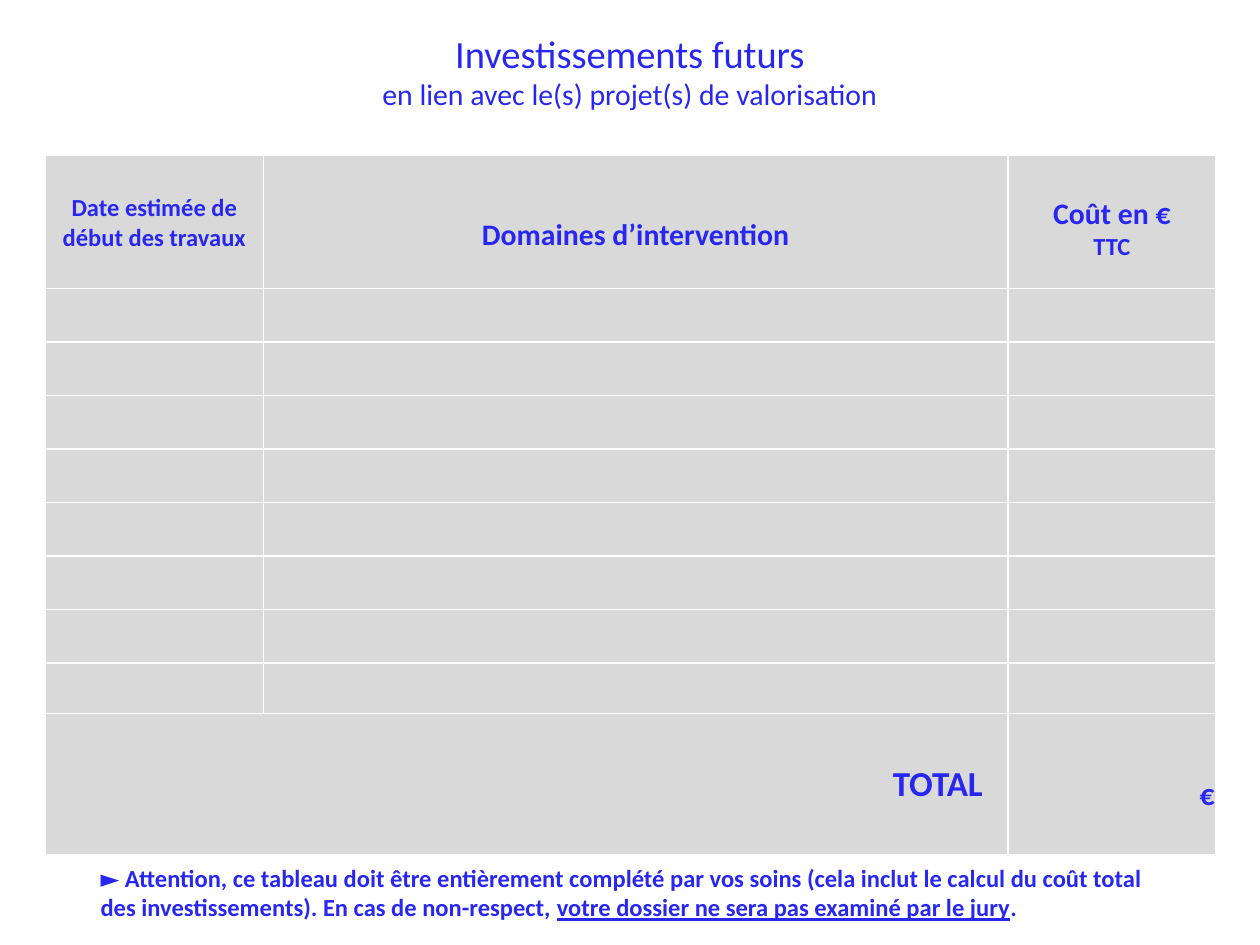
from lxml.etree import SubElement
from pptx import Presentation
from pptx.dml.color import RGBColor
from pptx.enum.text import MSO_ANCHOR, PP_ALIGN
from pptx.oxml.ns import qn
from pptx.util import Inches, Pt

FONT = "Calibri"
INK, CELL, RULE = "2727F1", "D9D9D9", "FFFFFF"
COLUMNS = [1.73, 5.91, 1.65]
ROWS = [1.06] + [0.425] * 7 + [0.4, 1.12]


def paint(color, code):
    """Set a colour from a hex string."""
    color.rgb = RGBColor.from_string(code)


def write(frame, lines, align=PP_ALIGN.LEFT, bold=False):
    """Write (size, spans) lines, where each span is (text, underlined)."""
    frame.word_wrap = True
    for index, (size, spans) in enumerate(lines):
        para = frame.paragraphs[0] if index == 0 else frame.add_paragraph()
        para.alignment = align
        para.font.name, para.font.size, para.font.bold = FONT, Pt(size), bold
        paint(para.font.color, INK)
        for text, underlined in spans:
            span = para.add_run()
            span.text = text
            if underlined:
                span.font.underline = True


def plain(size, text):
    """Return a line made of one span without underline."""
    return size, [(text, False)]


def add_text(page, left, top, width, height, lines, anchor, **style):
    """Add a wrapped text box placed in inches."""
    box = page.shapes.add_textbox(*map(Inches, (left, top, width, height)))
    box.text_frame.vertical_anchor = anchor
    write(box.text_frame, lines, **style)


def style_cell(cell):
    """Give a cell thin margins, white borders and a grey fill."""
    cell.margin_left = cell.margin_right = cell.margin_top = Inches(0.01)
    cell.margin_bottom = 0
    properties = cell._tc.get_or_add_tcPr()
    for side in ("lnL", "lnR", "lnT", "lnB"):
        line = SubElement(properties, qn(f"a:{side}"), w=str(Pt(1)))
        SubElement(SubElement(line, qn("a:solidFill")), qn("a:srgbClr"), val=RULE)
    cell.fill.solid()
    paint(cell.fill.fore_color, CELL)


def fill_cell(cell, lines, align, bottom, anchor=MSO_ANCHOR.BOTTOM):
    """Write bold lines in a cell, lifted from its bottom edge."""
    cell.vertical_anchor = anchor
    cell.margin_bottom = Inches(bottom)
    write(cell.text_frame, lines, align, bold=True)


def add_investments(page):
    """Add the table of investments with its header and total rows."""
    sizes = (0.36, 1.23, sum(COLUMNS), sum(ROWS))
    table = page.shapes.add_table(len(ROWS), len(COLUMNS), *map(Inches, sizes)).table
    table.first_row = table.horz_banding = False
    for column, width in zip(table.columns, COLUMNS):
        column.width = Inches(width)
    for row, height in zip(table.rows, ROWS):
        row.height = Inches(height)
    for cell in table.iter_cells():
        style_cell(cell)
    headers = [
        ([plain(14, "Date estimée de début des travaux")], 0.28),
        ([plain(17, "Domaines d’intervention")], 0.28),
        ([plain(17, "Coût en €"), plain(14, "TTC")], 0.21),
    ]
    for index, (lines, bottom) in enumerate(headers):
        fill_cell(table.cell(0, index), lines, PP_ALIGN.CENTER, bottom)
    last = len(ROWS) - 1
    total = table.cell(last, 0)
    total.merge(table.cell(last, 1))
    fill_cell(total, [plain(20, "TOTAL")], PP_ALIGN.RIGHT, 0, MSO_ANCHOR.MIDDLE)
    total.margin_right = Inches(0.2)
    fill_cell(table.cell(last, 2), [plain(17, "€")], PP_ALIGN.RIGHT, 0.33)


def main():
    """Build the slide and save it."""
    deck = Presentation()
    deck.slide_width, deck.slide_height = Inches(10), Inches(7.5)
    page = deck.slides.add_slide(deck.slide_layouts[6])
    add_investments(page)
    title = [
        plain(22, "Investissements futurs"),
        plain(17, "en lien avec le(s) projet(s) de valorisation"),
    ]
    add_text(page, 0, 0.13, 10, 0.86, title, MSO_ANCHOR.MIDDLE, align=PP_ALIGN.CENTER)
    warning = [
        ("► Attention, ce tableau doit être entièrement complété par vos soins "
         "(cela inclut le calcul du coût total des investissements). "
         "En cas de non-respect, ", False),
        ("votre dossier ne sera pas examiné par le jury", True),
        (".", False),
    ]
    add_text(page, 0.7, 6.8, 8.6, 0.57, [(14, warning)], MSO_ANCHOR.TOP, bold=True)
    deck.save("out.pptx")


if __name__ == "__main__":
    main()
